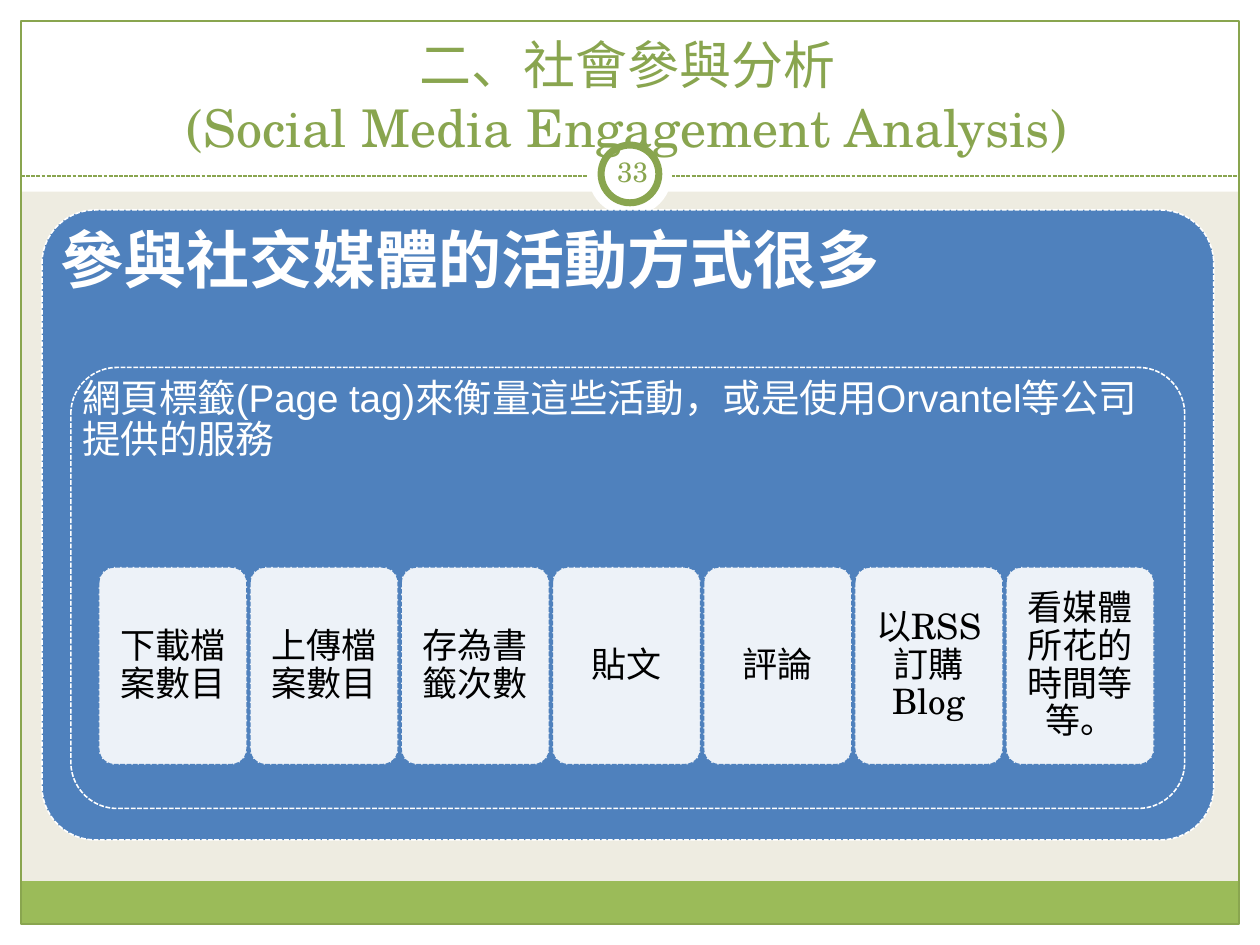
from lxml import etree
from pptx import Presentation
from pptx import util as u
from pptx.dml.color import RGBColor
from pptx.enum import dml, shapes, text
from pptx.oxml import ns

Pt = u.Pt
WHITE = RGBColor(0xFF, 0xFF, 0xFF)
BLACK = RGBColor(0, 0, 0)
BEIGE = RGBColor(0xEE, 0xEC, 0xE1)
GREEN = RGBColor(0x9B, 0xBB, 0x59)
OLIVE = RGBColor(0x89, 0xA5, 0x4F)
BLUE = RGBColor(0x4F, 0x81, 0xBD)
SERIF, SANS = "TeX Gyre Schola", "Arial"
RECT = shapes.MSO_SHAPE.RECTANGLE
OVAL = shapes.MSO_SHAPE.OVAL
ROUND = shapes.MSO_SHAPE.ROUNDED_RECTANGLE

W, H, EDGE = 720, 540, 12
ACTIVITIES = ["下載檔案數目", "上傳檔案數目", "存為書籤次數", "貼文", "評論",
              "以RSS訂購 Blog", "看媒體所花的時間等等。"]


class Deck:
    def __init__(self):
        self.prs = Presentation()
        self.prs.slide_width, self.prs.slide_height = Pt(W), Pt(H)
        self.s = self.prs.slides.add_slide(self.prs.slide_layouts[6])
        fill = self.s.background.fill
        fill.solid()
        fill.fore_color.rgb = BEIGE

    def outline(self, sp, color, width, dashed):
        sp.line.color.rgb = color
        sp.line.width = Pt(width)
        if dashed:
            sp.line.dash_style = dml.MSO_LINE.SQUARE_DOT

    def shape(self, kind, box, fill=None, line=None, width=0.75,
              dashed=False, adj=None, alpha=None):
        """Add a preset shape; alpha is the opacity of the fill in percent."""
        sp = self.s.shapes.add_shape(kind, *map(Pt, box))
        sp.shadow.inherit = False
        if adj is not None:
            sp.adjustments[0] = adj
        if fill is None:
            sp.fill.background()
        else:
            sp.fill.solid()
            sp.fill.fore_color.rgb = fill
        if alpha is not None:
            clr = sp.fill._xPr.find(".//" + ns.qn("a:srgbClr"))
            etree.SubElement(clr, ns.qn("a:alpha")).set("val", str(alpha * 1000))
        if line is None:
            sp.line.fill.background()
        else:
            self.outline(sp, line, width, dashed)

    def rule(self, x1, y1, x2, y2, color):
        ln = self.s.shapes.add_connector(
            shapes.MSO_CONNECTOR.STRAIGHT, *map(Pt, (x1, y1, x2, y2)))
        self.outline(ln, color, 0.75, True)
        etree.SubElement(ln._element.spPr, ns.qn("a:effectLst"))

    def text(self, txt, box, size, color, font=SERIF, bold=False,
             align=text.PP_ALIGN.CENTER, anchor=text.MSO_ANCHOR.MIDDLE,
             inset=3.6, spacing=None):
        tf = self.s.shapes.add_textbox(*map(Pt, box)).text_frame
        tf.word_wrap = True
        tf.vertical_anchor = anchor
        tf.margin_left = tf.margin_right = Pt(inset)
        tf.margin_top = tf.margin_bottom = Pt(inset)
        p = tf.paragraphs[0]
        p.alignment = align
        if spacing:
            p.line_spacing = spacing
        for i, part in enumerate(txt.split("\n")):
            if i:
                p.add_line_break()
            r = p.add_run()
            r.text = part
            r.font.size, r.font.name, r.font.bold = Pt(size), font, bold
            r.font.color.rgb = color

    def panel(self, txt, box, size, adj, inset, bold=False):
        """Add a blue rounded panel with its text at the top left."""
        self.shape(ROUND, box, BLUE, WHITE, 0.9, True, adj)
        self.text(txt, box, size, WHITE, SANS, bold, text.PP_ALIGN.LEFT,
                  text.MSO_ANCHOR.TOP, inset, 0.9)

    def card(self, txt, box):
        self.shape(ROUND, box, WHITE, BLUE, 0.9, True, 0.105, alpha=90)
        self.text(txt, box, 20, BLACK, inset=5.76, spacing=0.9)


def main():
    d = Deck()
    for band in [(0, H - EDGE, W, EDGE), (0, 0, W, 109.5),
                 (0, 0, EDGE, H), (W - EDGE, 0, EDGE, H)]:
        d.shape(RECT, band, WHITE)
    d.shape(RECT, (EDGE, 503.5, W - 2 * EDGE, 24.5), GREEN)
    d.shape(RECT, (EDGE, EDGE, W - 2 * EDGE, H - 2 * EDGE), line=OLIVE)
    d.rule(EDGE, 100.6, W - EDGE, 100.6, OLIVE)

    for size, line in [(48, None), (33, OLIVE)]:
        d.shape(OVAL, (W / 2 - size / 2, 99.4 - size / 2, size, size),
                WHITE, line, 4)
    d.text("二、社會參與分析\n(Social Media Engagement Analysis)",
           (22.5, 33.8, 672, 59.8), 29.7, OLIVE, anchor=text.MSO_ANCHOR.BOTTOM)
    d.text("33", (343.5, 80.6, 36, 34.6), 16, OLIVE)

    d.panel("參與社交媒體的活動方式很多", (24, 120, 669.6, 360),
            36, 0.085, 10.8, bold=True)
    d.panel("網頁標籤(Page tag)來衡量這些活動，或是使用Orvantel等公司提供的服務",
            (40.5, 210, 636.5, 252), 22, 0.105, 6.48)
    for i, activity in enumerate(ACTIVITIES):
        d.card(activity, (56.4 + 86.4 * i, 324, 84.8, 113))
    d.prs.save("out.pptx")


if __name__ == "__main__":
    main()
